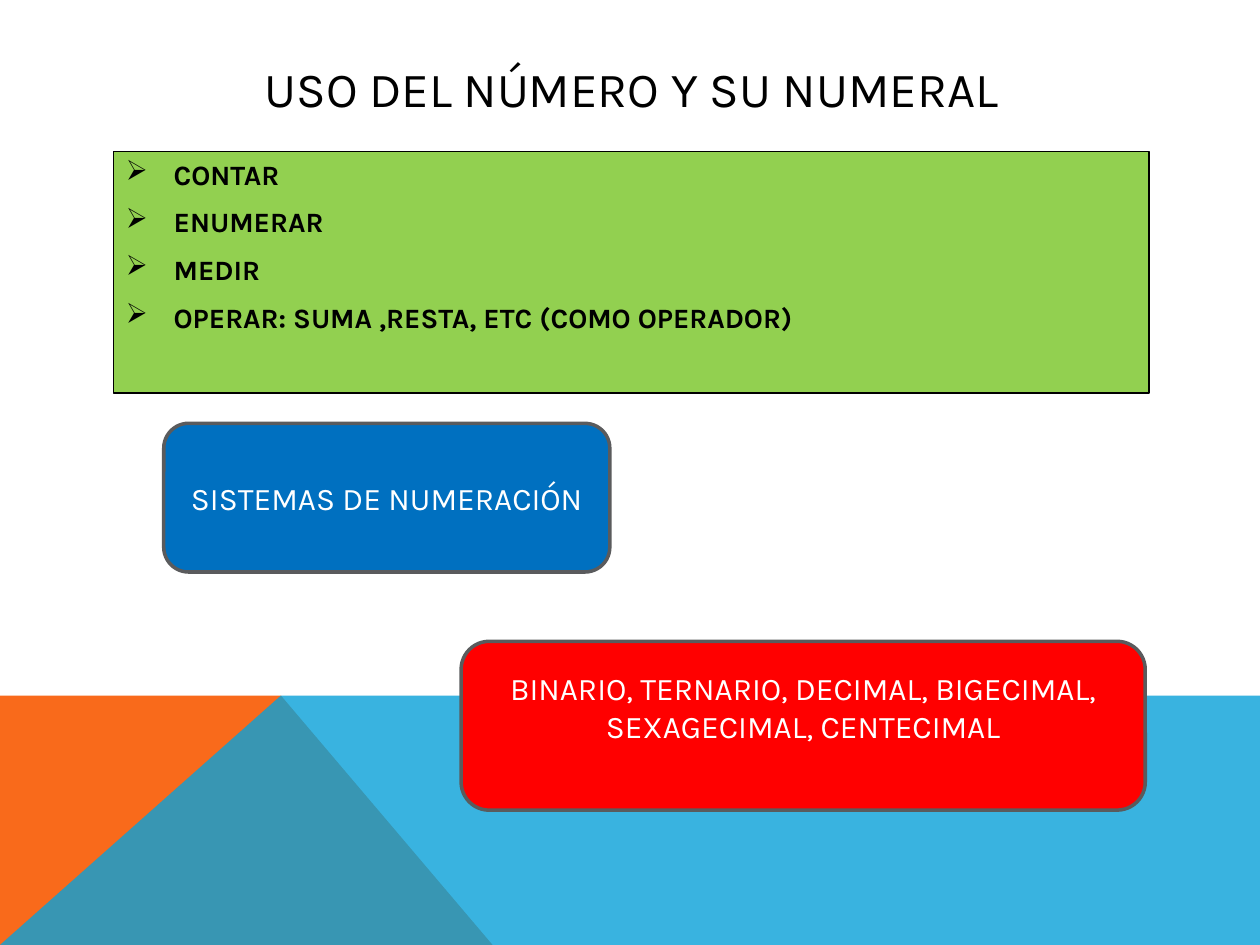
import pptx
import pptx.util
import pptx.dml.color
import pptx.enum.shapes
import pptx.enum.text
import pptx.oxml.ns
from lxml import etree

Inches = pptx.util.Inches
Pt = pptx.util.Pt
SHAPE = pptx.enum.shapes.MSO_SHAPE
ALIGN = pptx.enum.text.PP_ALIGN
ANCHOR = pptx.enum.text.MSO_ANCHOR
qn = pptx.oxml.ns.qn

WIDTH, HEIGHT = 10, 7.5
COLORS = {
    "orange": "F96A1B", "sky": "08A1D9", "green": "92D050", "blue": "0070C0",
    "red": "FF0000", "gray": "5A5B5D", "black": "000000", "white": "FFFFFF",
}
USES = ["CONTAR", "ENUMERAR", "MEDIR", "OPERAR: SUMA ,RESTA, ETC (COMO OPERADOR)"]


def color(name):
    return pptx.dml.color.RGBColor.from_string(COLORS[name])


def paint(shape, fill, line=None, width=0):
    shape.shadow.inherit = False
    shape.fill.solid()
    shape.fill.fore_color.rgb = color(fill)
    if line:
        shape.line.color.rgb = color(line)
        shape.line.width = Pt(width)
    else:
        shape.line.fill.background()


def write(frame, lines, size, ink, align, anchor, bold=False):
    frame.word_wrap = True
    frame.vertical_anchor = anchor
    frame.text = "\n".join(lines)
    for para in frame.paragraphs:
        para.alignment = align
        for run in para.runs:
            run.font.name = "Karla"
            run.font.size = Pt(size)
            run.font.bold = bold
            run.font.color.rgb = color(ink)


def bullet(para, indent):
    props = para._p.get_or_add_pPr()
    props.set("marL", str(indent))
    props.set("indent", str(-indent))
    etree.SubElement(props, qn("a:buChar")).set("char", "➢")


def add_area(slide, points, fill):
    dots = [(Inches(x), Inches(y)) for x, y in points]
    form = slide.shapes.build_freeform(*dots[0], scale=1.0)
    form.add_line_segments(dots[1:], close=True)
    area = form.convert_to_shape()
    paint(area, fill)
    return area


def add_base(slide, left, top, width, height):
    """Draw the coloured band with its overlapping slopes."""
    right, base, peak = left + width, top + height, left + 2.23
    add_area(slide, [(left, base), (left, top), (peak, top), (left + 3.91, base)], "orange")
    veil = add_area(slide, [(left, base), (peak, top), (right, top), (right, base)], "sky")
    tint = veil.fill._xPr.find(qn("a:solidFill"))[0]
    etree.SubElement(tint, qn("a:alpha")).set("val", "80000")


def add_title(slide, left, top, width, height):
    box = slide.shapes.add_textbox(Inches(left), Inches(top), Inches(width), Inches(height))
    write(box.text_frame, ["USO DEL NÚMERO Y SU NUMERAL"], 28, "black", ALIGN.CENTER, ANCHOR.MIDDLE)


def add_uses(slide, left, top, width, height):
    box = slide.shapes.add_shape(
        SHAPE.RECTANGLE, Inches(left), Inches(top), Inches(width), Inches(height))
    paint(box, "green", "black", 0.75)
    write(box.text_frame, USES, 16, "black", ALIGN.LEFT, ANCHOR.TOP, bold=True)
    for para in box.text_frame.paragraphs:
        para.space_before = Pt(8)
        bullet(para, Inches(0.38))


def add_card(slide, left, top, width, height, text, fill, foot=0.05):
    """Add a rounded card; foot is the space kept below its text."""
    card = slide.shapes.add_shape(
        SHAPE.ROUNDED_RECTANGLE, Inches(left), Inches(top), Inches(width), Inches(height))
    paint(card, fill, "gray", 2)
    write(card.text_frame, [text], 18, "white", ALIGN.CENTER, ANCHOR.MIDDLE)
    card.text_frame.margin_bottom = Inches(foot)


def main():
    deck = pptx.Presentation()
    deck.slide_width, deck.slide_height = Inches(WIDTH), Inches(HEIGHT)
    slide = deck.slides.add_slide(deck.slide_layouts[6])
    add_base(slide, 0, 5.52, WIDTH, HEIGHT - 5.52)
    add_title(slide, 0.9, 0.4, 8.22, 0.6)
    add_uses(slide, 0.9, 1.2, 8.22, 1.92)
    add_card(slide, 1.3, 3.36, 3.54, 1.18, "SISTEMAS DE NUMERACIÓN", "blue")
    add_card(slide, 3.66, 5.09, 5.43, 1.34,
             "BINARIO, TERNARIO, DECIMAL, BIGECIMAL, SEXAGECIMAL, CENTECIMAL",
             "red", foot=0.35)
    deck.save("out.pptx")


if __name__ == "__main__":
    main()
